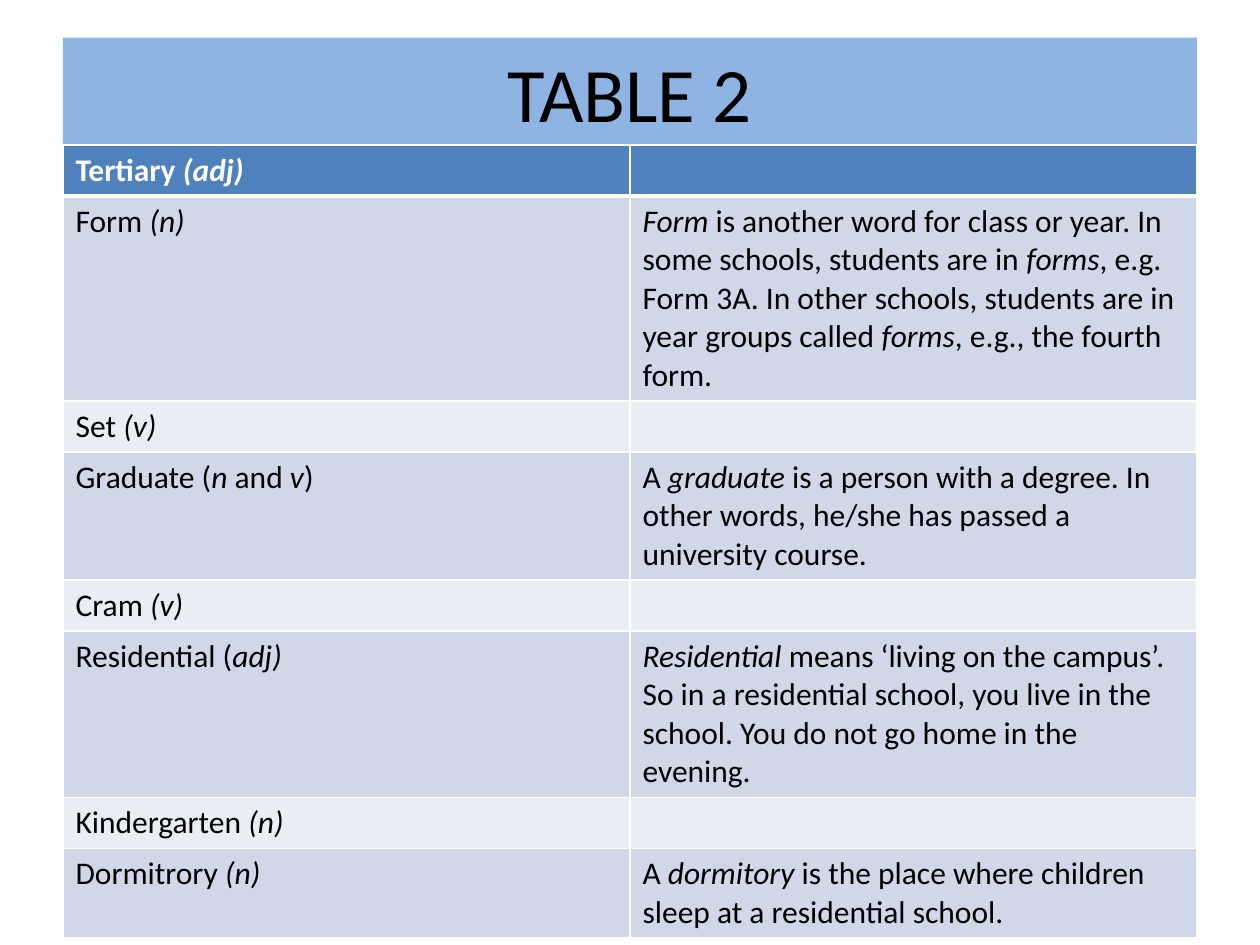
from lxml import etree
from pptx import Presentation
from pptx.dml.color import RGBColor
from pptx.enum import shapes, text
from pptx.oxml import ns
from pptx.util import Cm, Pt

COLORS = {
    "banner": "8EB4E3",
    "header": "4F81BD",
    "odd": "D0D8E8",
    "even": "E9EDF4",
    "white": "FFFFFF",
    "black": "000000",
}

ROWS = [
    ("Tertiary *(adj)*", "", 1),
    ("Form *(n)*",
     "*Form* is another word for class or year. In some schools, students are in "
     "*forms*, e.g. Form 3A. In other schools, students are in year groups called "
     "*forms*, e.g., the fourth form.", 5),
    ("Set *(v)*", "", 1),
    ("Graduate (*n* and *v*)",
     "A *graduate* is a person with a degree. In other words, he/she has passed "
     "a university course.", 3),
    ("Cram *(v)*", "", 1),
    ("Residential (*adj)*",
     "*Residential *means ‘living on the campus’. So in a residential school, "
     "you live in the school. You do not go home in the evening.", 4),
    ("Kindergarten *(n)*", "", 1),
    ("Dormitrory *(n)*",
     "A* dormitory *is the place where children sleep at a residential school.", 2),
]


class Deck:
    font = "Calibri"
    left, width = Cm(1.27), Cm(22.86)
    row_height, line_height = 1.02, 0.76

    def __init__(self, prs):
        self.slide = prs.slides.add_slide(prs.slide_layouts[6])

    def color(self, name):
        return RGBColor.from_string(COLORS[name])

    def fill(self, item, name):
        item.fill.solid()
        item.fill.fore_color.rgb = self.color(name)

    def add_runs(self, p, marked, size, color, bold=False):
        for i, part in enumerate(marked.split("*")):
            if part:
                r = p.add_run()
                r.text = part
                r.font.name = self.font
                r.font.size = Pt(size)
                r.font.bold = bold
                r.font.italic = i % 2 == 1
                r.font.color.rgb = self.color(color)

    def banner(self, title, top, height):
        sp = self.slide.shapes.add_shape(
            shapes.MSO_SHAPE.RECTANGLE, self.left, top, self.width, height)
        sp.shadow.inherit = False
        self.fill(sp, "banner")
        sp.line.fill.background()
        tf = sp.text_frame
        tf.word_wrap = True
        tf.vertical_anchor = text.MSO_ANCHOR.MIDDLE
        p = tf.paragraphs[0]
        p.alignment = text.PP_ALIGN.CENTER
        self.add_runs(p, title, 44, "black")

    def borders(self, cell, widths):
        tc_pr = cell._tc.get_or_add_tcPr()
        for i, (side, width) in enumerate(widths.items()):
            ln = etree.Element(ns.qn(f"a:ln{side}"), w=str(Pt(width)))
            fill = etree.SubElement(ln, ns.qn("a:solidFill"))
            etree.SubElement(fill, ns.qn("a:srgbClr"), val=COLORS["white"])
            tc_pr.insert(i, ln)

    def table(self, rows, top):
        heights = [Cm(self.row_height + self.line_height * (n - 1)) for _, _, n in rows]
        table = self.slide.shapes.add_table(
            len(rows), 2, self.left, top, self.width, sum(heights)).table
        for i, (term, meaning, _) in enumerate(rows):
            table.rows[i].height = heights[i]
            head = i == 0
            band = "header" if head else ("even", "odd")[i % 2]
            widths = {"L": 1, "R": 1, "T": 3 if i == 1 else 1, "B": 3 if head else 1}
            for cell, marked in zip(table.rows[i].cells, (term, meaning)):
                self.fill(cell, band)
                self.borders(cell, widths)
                self.add_runs(cell.text_frame.paragraphs[0], marked, 18,
                              "white" if head else "black", head)


def main():
    prs = Presentation()
    prs.slide_width, prs.slide_height = Cm(25.4), Cm(19.05)
    deck = Deck(prs)
    deck.banner("TABLE 2", Cm(0.76), Cm(2.16))
    deck.table(ROWS, Cm(2.92))
    prs.save("out.pptx")


if __name__ == "__main__":
    main()
